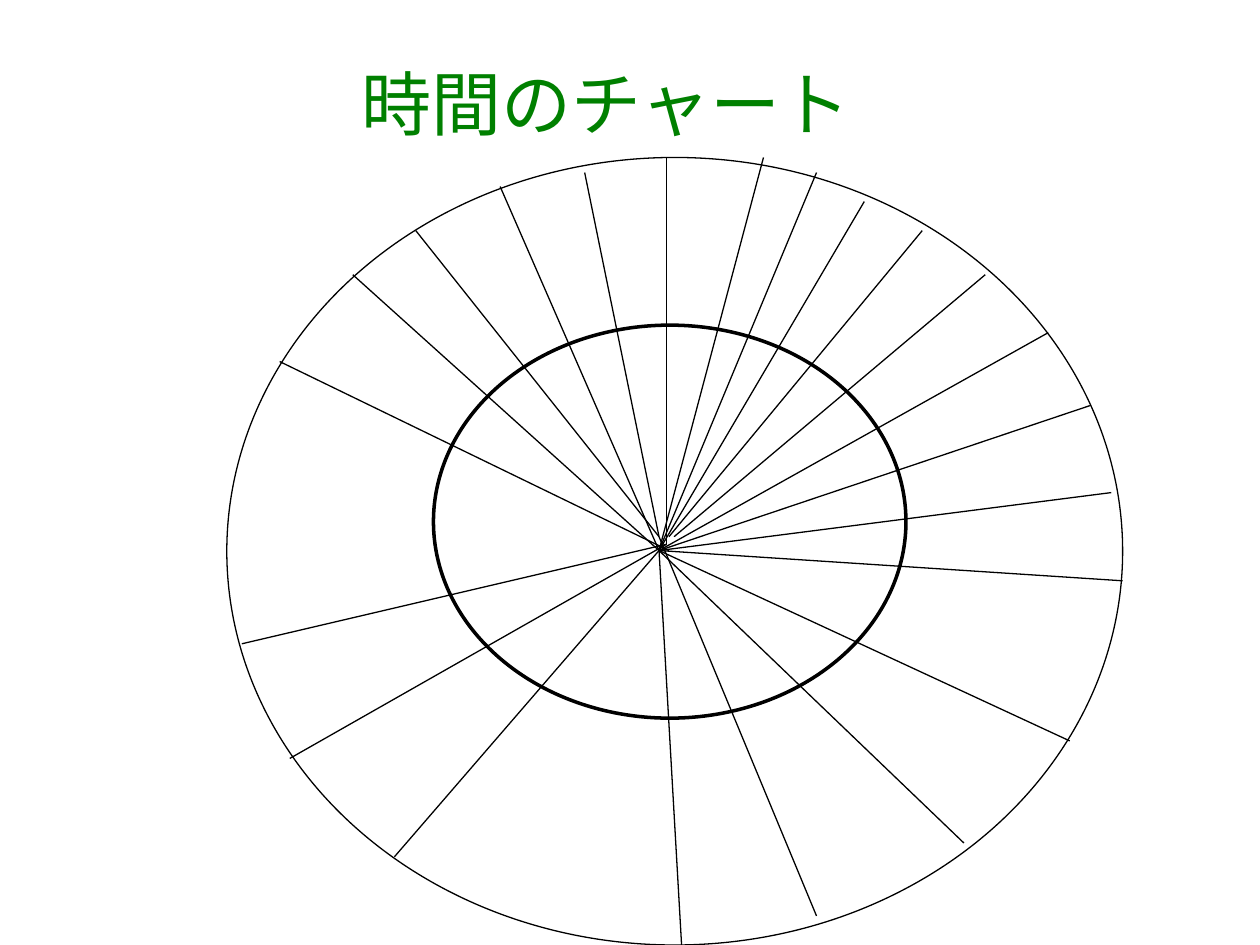
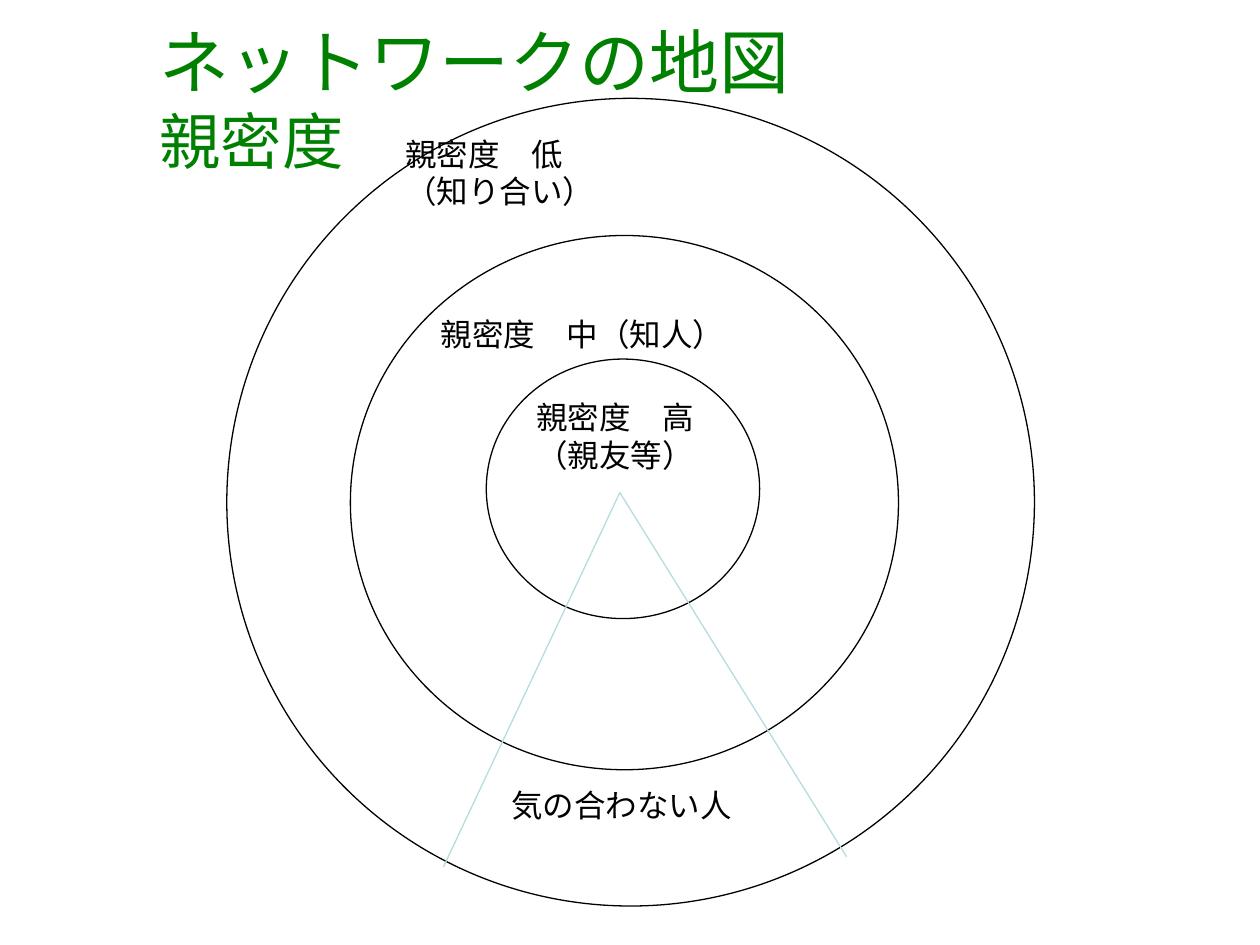
"""Build two slides: a chart of time and a map of closeness in a network."""
from lxml.etree import SubElement
from pptx import Presentation
from pptx.dml.color import RGBColor
from pptx.enum.shapes import MSO_CONNECTOR, MSO_SHAPE
from pptx.enum.text import MSO_ANCHOR, PP_ALIGN
from pptx.oxml.ns import qn
from pptx.util import Pt

COLORS = {"title": "008000", "ink": "000000", "paper": "FFFFFF", "wedge": "B6DCDF"}
FONT = "Arial"
TITLE_SIZE, SUBTITLE_SIZE, LABEL_SIZE = 40, 35, 18
THIN, THICK = 0.75, 2
RING_INSETS = (5.76, 0.72)
BOX_INSETS = (7.2, 3.6)

TIME_SPOKES = {
    (376.6, 314.6): [
        (436.3, 90), (466.6, 98.6), (493.9, 115.2), (599, 190.1), (622.8, 231.8),
        (635, 281.5), (641.5, 331.9), (611.3, 423.4), (550.8, 481.7), (389.5, 540),
        (225.4, 489.6), (201.6, 157), (285.8, 106.6),
    ],
    (376.6, 306.7): [(466.6, 523.4), (237.6, 131.8), (334.1, 98.6)],
    (380.9, 311): [(380.9, 90), (165.6, 433.4), (138.2, 367.9)],
    (382.3, 306.7): [(527, 131.8)],
    (385.2, 306.7): [(563, 157)],
    (382.3, 314.6): [(159.8, 206.6)],
}
CLOSENESS_RINGS = [
    ((129.6, 56.2, 461.5, 461.5), []),
    ((200.2, 134.6, 313.2, 305.3), ["親密度　中（知人）"]),
    ((277.9, 205.2, 156.2, 148.3), ["親密度　高", "（親友等）"]),
]
WEDGE_APEX = (354.2, 281.5)
WEDGE_ENDS = [(253.4, 495.4), (483.8, 489.6)]


def rgb(role):
    """Return the colour for a role."""
    return RGBColor.from_string(COLORS[role])


def add_run(paragraph, wording, size, role):
    """Append one styled run to a paragraph."""
    run = paragraph.add_run()
    run.text = wording
    run.font.name = FONT
    run.font.size = Pt(size)
    run.font.color.rgb = rgb(role)


def set_frame(frame, insets, anchor):
    """Set wrapping, insets and vertical anchor of a text frame."""
    frame.word_wrap = True
    frame.margin_left = frame.margin_right = Pt(insets[0])
    frame.margin_top = frame.margin_bottom = Pt(insets[1])
    frame.vertical_anchor = anchor


def write_label(frame, lines, insets=BOX_INSETS):
    """Write label lines, one paragraph each, from the top left."""
    set_frame(frame, insets, MSO_ANCHOR.TOP)
    for index, line in enumerate(lines):
        paragraph = frame.add_paragraph() if index else frame.paragraphs[0]
        paragraph.alignment = PP_ALIGN.LEFT
        add_run(paragraph, line, LABEL_SIZE, "ink")


def add_title(slide, area, parts, align):
    """Add a slide title whose (wording, size) parts sit on separate lines."""
    frame = slide.shapes.add_textbox(*map(Pt, area)).text_frame
    set_frame(frame, BOX_INSETS, MSO_ANCHOR.MIDDLE)
    heading = frame.paragraphs[0]
    heading.alignment = align
    for index, (wording, size) in enumerate(parts):
        if index:
            heading.add_line_break()
        add_run(heading, wording, size, "title")


def add_label(slide, area, wording):
    """Add a free-standing label."""
    write_label(slide.shapes.add_textbox(*map(Pt, area)).text_frame, [wording])


def add_ring(slide, area, lines=(), weight=THIN, filled=True):
    """Add an outlined ellipse with optional label lines."""
    ring = slide.shapes.add_shape(MSO_SHAPE.OVAL, *map(Pt, area))
    ring.shadow.inherit = False
    if filled:
        ring.fill.solid()
        ring.fill.fore_color.rgb = rgb("paper")
    else:
        ring.fill.background()
    ring.line.color.rgb = rgb("ink")
    ring.line.width = Pt(weight)
    if lines:
        write_label(ring.text_frame, lines, RING_INSETS)


def add_spokes(slide, hub, tips, role):
    """Draw thin lines from a hub to each tip."""
    for tip in tips:
        spoke = slide.shapes.add_connector(MSO_CONNECTOR.STRAIGHT, *map(Pt, hub + tip))
        spoke.line.color.rgb = rgb(role)
        spoke.line.width = Pt(THIN)
        SubElement(spoke._element.spPr, qn("a:effectLst"))


def build_time_chart(slide):
    """Build the time chart."""
    add_ring(slide, (129.6, 90, 511.9, 450))
    for hub, tips in TIME_SPOKES.items():
        add_spokes(slide, hub, tips, "ink")
    add_title(slide, (113, 21.6, 466.6, 74.2), [("時間のチャート", TITLE_SIZE)],
              PP_ALIGN.CENTER)
    add_ring(slide, (247.7, 185.8, 270, 224.6), weight=THICK, filled=False)


def build_network_map(slide):
    """Build the map of closeness."""
    add_title(slide, (84.2, 0, 599.8, 111.6),
              [("ネットワークの地図", TITLE_SIZE), ("親密度", SUBTITLE_SIZE)],
              PP_ALIGN.LEFT)
    for area, lines in CLOSENESS_RINGS:
        add_ring(slide, area, lines)
    add_spokes(slide, WEDGE_APEX, WEDGE_ENDS, "wedge")
    add_label(slide, (285, 445.5, 150, 29), "気の合わない人")
    add_label(slide, (224.6, 73.4, 123.8, 51.1), "親密度　低（知り合い）")


def main():
    """Create and save the presentation."""
    deck = Presentation()
    deck.slide_width, deck.slide_height = Pt(720), Pt(540)
    blank = deck.slide_layouts[6]
    for build in (build_time_chart, build_network_map):
        build(deck.slides.add_slide(blank))
    deck.save("out.pptx")


if __name__ == "__main__":
    main()
